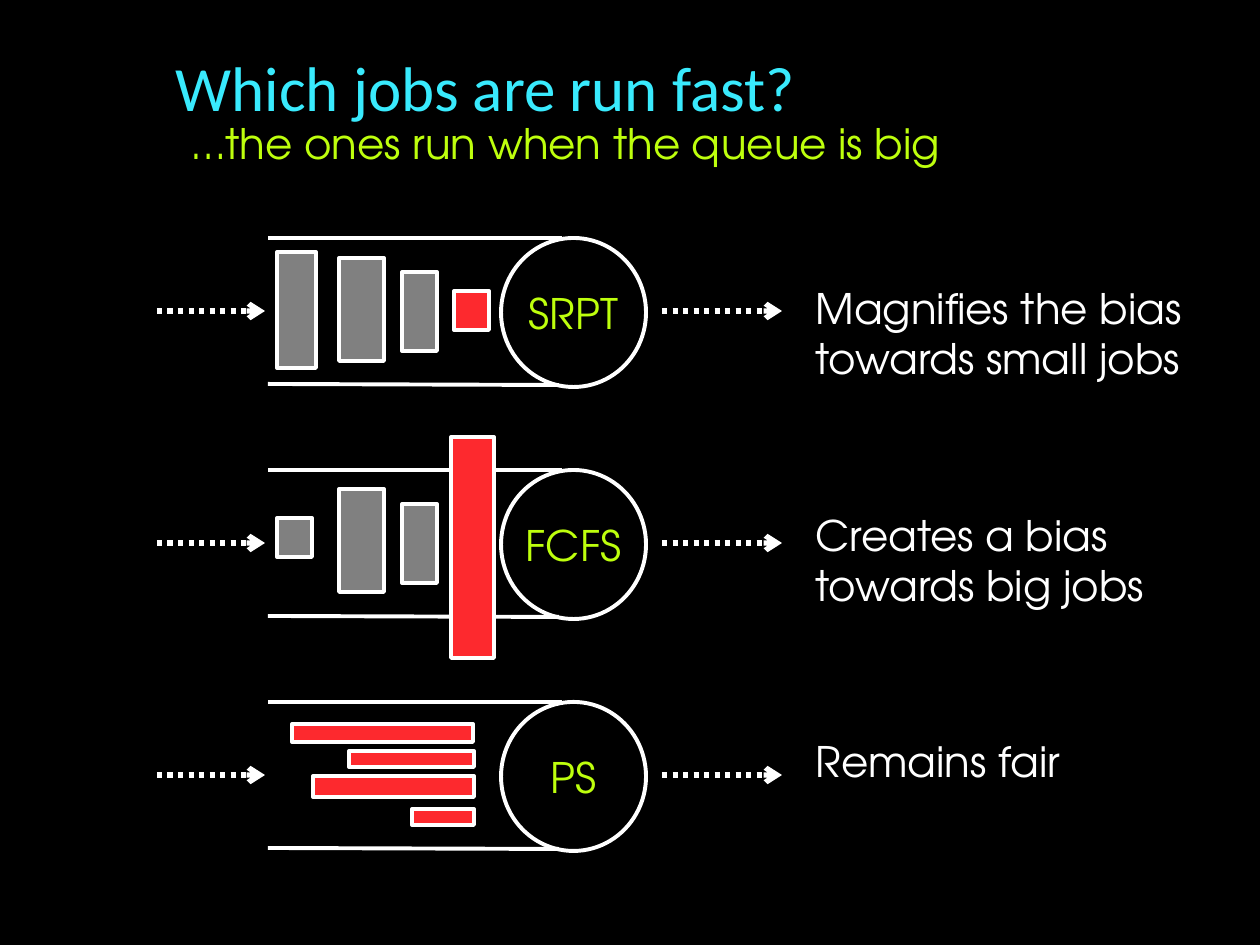
from dataclasses import dataclass

from lxml.etree import SubElement
from pptx import Presentation
from pptx.dml.color import RGBColor
from pptx.enum.dml import MSO_LINE
from pptx.enum.shapes import MSO_CONNECTOR, MSO_SHAPE
from pptx.enum.text import MSO_ANCHOR, MSO_AUTO_SIZE, PP_ALIGN
from pptx.oxml.ns import qn
from pptx.util import Emu, Pt

HUES = {
    "back": "000000",
    "title": "39EAFD",
    "lime": "BEFF0D",
    "white": "FFFFFF",
    "grey": "808080",
    "red": "FD292E",
}
FACE = "TeX Gyre Adventor"
TOP, PITCH = 238, 232  # first queue and step between queues


@dataclass
class Job:
    x: int
    y: int  # below the top of its queue
    w: int
    h: int
    hue: str = "grey"


@dataclass
class Queue:
    name: str
    note: str
    jobs: list[Job]


QUEUES = [
    Queue("SRPT", "Magnifies the bias towards small jobs", [
        Job(339, 20, 45, 103),
        Job(402, 34, 35, 79),
        Job(277, 14, 39, 116),
        Job(454, 53, 35, 39, "red"),
    ]),
    Queue("FCFS", "Creates a bias towards big jobs", [
        Job(339, 19, 45, 103),
        Job(402, 34, 35, 79),
        Job(451, -33, 43, 221, "red"),
        Job(277, 48, 35, 39),
    ]),
    Queue("PS", "Remains fair", [
        Job(313, 74, 161, 21, "red"),
        Job(349, 49, 125, 16, "red"),
        Job(292, 22, 181, 18, "red"),
        Job(412, 107, 62, 16, "red"),
    ]),
]


def px(n: int) -> Emu:
    return Emu(round(n * 914400 / 126))


def tint(hue: str) -> RGBColor:
    return RGBColor.from_string(HUES[hue])


def write(para, text: str, hue: str, size: int = 24, face: str = FACE) -> None:
    run = para.add_run()
    run.text = text
    run.font.size, run.font.name = Pt(size), face
    run.font.color.rgb = tint(hue)


def place(shape, x: int, y: int, w: int, h: int) -> None:
    shape.left, shape.top, shape.width, shape.height = map(px, (x, y, w, h))


def solid(group, kind: MSO_SHAPE, x: int, y: int, w: int, h: int, hue: str = ""):
    shape = group.shapes.add_shape(kind, *map(px, (x, y, w, h)))
    shape.shadow.inherit = False
    if hue:
        shape.fill.solid()
        shape.fill.fore_color.rgb = tint(hue)
    else:
        shape.fill.background()
    shape.line.color.rgb = tint("white")
    shape.line.width = Pt(2.25)
    return shape


def stroke(group, x1: int, y1: int, x2: int, y2: int, arrow: bool = False) -> None:
    line = group.shapes.add_connector(
        MSO_CONNECTOR.STRAIGHT, *map(px, (x1, y1, x2, y2)))
    line.line.color.rgb = tint("white")
    line.line.width = Pt(3 if arrow else 2.25)
    if arrow:
        line.line.dash_style = MSO_LINE.ROUND_DOT
        SubElement(line.line._get_or_add_ln(), qn("a:tailEnd"), type="arrow")
    SubElement(line._element.spPr, qn("a:effectLst"))


def draw(slide, queue: Queue, top: int) -> None:
    group = slide.shapes.add_group_shape()
    # Server
    disc = solid(group, MSO_SHAPE.OVAL, 501, top, 145, 149)
    frame = disc.text_frame
    frame.margin_left = frame.margin_right = 0
    frame.vertical_anchor = MSO_ANCHOR.MIDDLE
    para = frame.paragraphs[0]
    para.alignment = PP_ALIGN.CENTER
    write(para, queue.name, "lime")
    # Queue walls
    stroke(group, 562, top, 268, top)
    stroke(group, 559, top + 147, 268, top + 146)
    # Waiting jobs
    for job in queue.jobs:
        solid(group, MSO_SHAPE.RECTANGLE, job.x, top + job.y, job.w, job.h, job.hue)
    # Arrivals and departures
    for start, end in ((662, 782), (157, 265)):
        stroke(group, start, top + 73, end, top + 73, arrow=True)


def main() -> None:
    deck = Presentation()
    deck.slide_width, deck.slide_height = px(1260), px(945)
    slide = deck.slides.add_slide(deck.slide_layouts[1])
    slide.background.fill.solid()
    slide.background.fill.fore_color.rgb = tint("back")

    # Title
    title = slide.shapes.title
    place(title, 163, 48, 969, 77)
    title.text_frame.auto_size = MSO_AUTO_SIZE.NONE
    title.text_frame.vertical_anchor = MSO_ANCHOR.MIDDLE
    para = title.text_frame.paragraphs[0]
    para.alignment = PP_ALIGN.LEFT
    write(para, "Which jobs are run fast?", "title", 36, "Calibri")

    # Effect of each policy
    body = slide.placeholders[1]
    place(body, 756, 276, 504, 588)
    frame = body.text_frame
    frame.auto_size = MSO_AUTO_SIZE.NONE
    for i, queue in enumerate(QUEUES):
        para = frame.add_paragraph() if i else frame.paragraphs[0]
        para.space_before = Pt(72 if i else 0)
        props = para._p.get_or_add_pPr()
        props.set("marL", str(px(47)))
        props.set("indent", "0")
        SubElement(props, qn("a:buNone"))
        write(para, queue.note, "white")

    # Queues
    for i, queue in enumerate(QUEUES):
        draw(slide, queue, TOP + i * PITCH)

    # Subtitle
    box = slide.shapes.add_textbox(*map(px, (179, 111, 789, 63)))
    box.text_frame.word_wrap = False
    write(box.text_frame.paragraphs[0], "…the ones run when the queue is big", "lime")

    deck.save("out.pptx")


if __name__ == "__main__":
    main()
